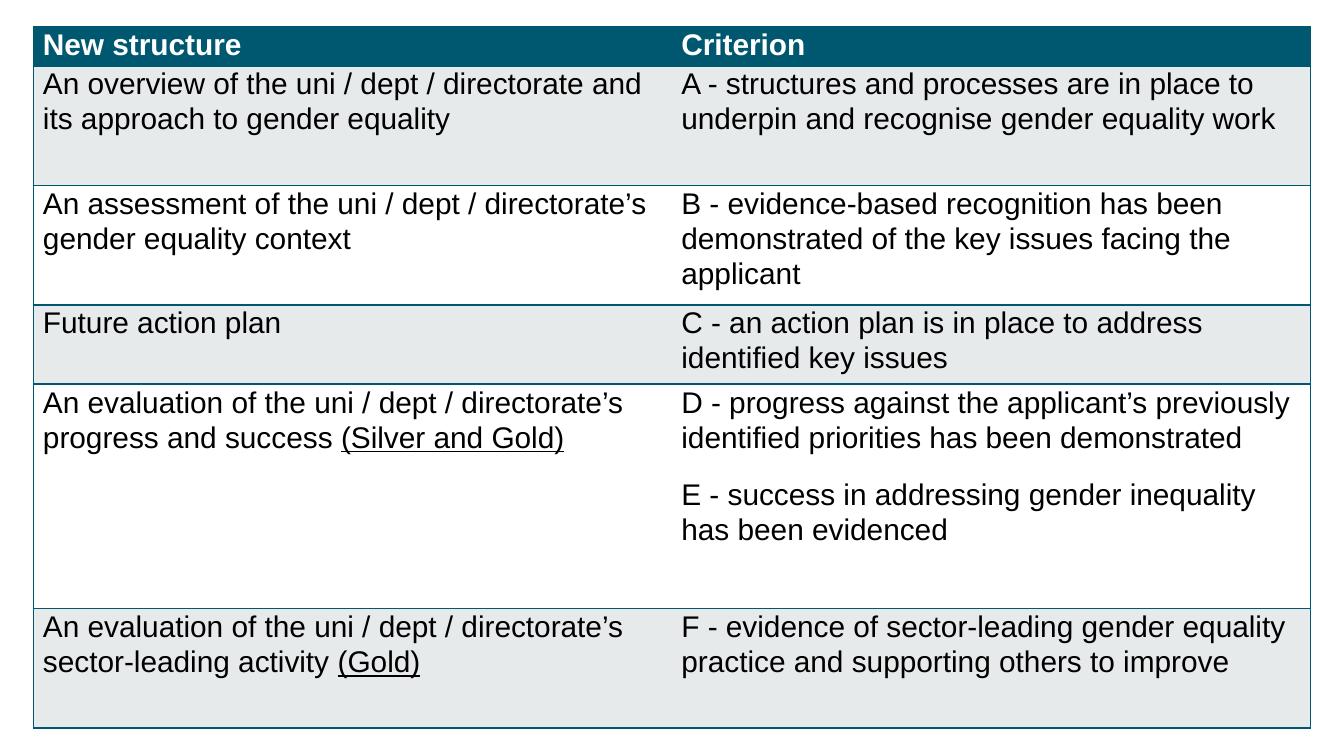
from lxml import etree
from pptx import Presentation
from pptx import util as u
from pptx.dml.color import RGBColor
from pptx.oxml.ns import qn

TEAL = RGBColor(0x00, 0x58, 0x70)
GREY = RGBColor(0xE7, 0xEA, 0xEB)
WHITE = RGBColor(0xFF, 0xFF, 0xFF)
BLACK = RGBColor(0x00, 0x00, 0x00)

# Widescreen slide, 16:9
SLIDE_WIDTH = u.Inches(10)
SLIDE_HEIGHT = SLIDE_WIDTH * 9 // 16
MARGIN_LEFT, MARGIN_TOP = u.Inches(0.25), u.Inches(0.2)
ROW_HEIGHTS = [0.29, 0.89, 0.89, 0.59, 1.67, 0.89]

# Each cell is a list of paragraphs; each paragraph is plain text
# followed, where needed, by an underlined award level.
ROWS = [
    ([("New structure",)], [("Criterion",)]),
    ([("An overview of the uni / dept / directorate and its approach to gender equality",)],
     [("A - structures and processes are in place to underpin and recognise gender equality work",)]),
    ([("An assessment of the uni / dept / directorate’s gender equality context",)],
     [("B - evidence-based recognition has been demonstrated of the key issues facing the applicant",)]),
    ([("Future action plan",)],
     [("C - an action plan is in place to address identified key issues",)]),
    ([("An evaluation of the uni / dept / directorate’s progress and success ", "(Silver and Gold)")],
     [("D - progress against the applicant’s previously identified priorities has been demonstrated",),
      ("E - success in addressing gender inequality has been evidenced",)]),
    ([("An evaluation of the uni / dept / directorate’s sector-leading activity ", "(Gold)")],
     [("F - evidence of sector-leading gender equality practice and supporting others to improve",)]),
]


def set_borders(cell, visible):
    """Draw the named sides in teal and hide the others."""
    properties = cell._tc.get_or_add_tcPr()
    for side in "LRTB":
        line = etree.SubElement(properties, qn(f"a:ln{side}"), w=str(u.Pt(1)))
        if side in visible:
            fill = etree.SubElement(line, qn("a:solidFill"))
            etree.SubElement(fill, qn("a:srgbClr"), val=str(TEAL))
        else:
            etree.SubElement(line, qn("a:noFill"))


def write_paragraph(paragraph, parts, color, bold):
    paragraph.line_spacing = 1.06
    paragraph.space_after = u.Pt(12)
    for position, part in enumerate(parts):
        run = paragraph.add_run()
        run.text = part
        run.font.name = "Arial"
        run.font.size = u.Pt(16)
        run.font.bold = bold
        run.font.color.rgb = color
        if position > 0:
            run.font.underline = True


def fill_cell(cell, paragraphs, background, color, bold, borders):
    cell.margin_left = cell.margin_right = u.Inches(0.07)
    cell.margin_top = cell.margin_bottom = 0
    set_borders(cell, borders)
    cell.fill.solid()
    cell.fill.fore_color.rgb = background
    frame = cell.text_frame
    for index, parts in enumerate(paragraphs):
        paragraph = frame.add_paragraph() if index else frame.paragraphs[0]
        write_paragraph(paragraph, parts, color, bold)


def add_criteria_table(slide):
    width = SLIDE_WIDTH - 2 * MARGIN_LEFT
    height = u.Inches(sum(ROW_HEIGHTS))
    criteria = slide.shapes.add_table(
        len(ROWS), 2, MARGIN_LEFT, MARGIN_TOP, width, height).table
    for row_index, (row, row_height) in enumerate(zip(ROWS, ROW_HEIGHTS)):
        criteria.rows[row_index].height = u.Inches(row_height)
        header = row_index == 0
        band = GREY if row_index % 2 else WHITE
        for column, paragraphs in enumerate(row):
            fill_cell(criteria.cell(row_index, column), paragraphs,
                      background=TEAL if header else band,
                      color=WHITE if header else BLACK,
                      bold=header,
                      borders=("LTB", "RTB")[column])


def main():
    presentation = Presentation()
    presentation.slide_width = SLIDE_WIDTH
    presentation.slide_height = SLIDE_HEIGHT
    slide = presentation.slides.add_slide(presentation.slide_layouts[6])
    add_criteria_table(slide)
    presentation.save("out.pptx")


if __name__ == "__main__":
    main()
